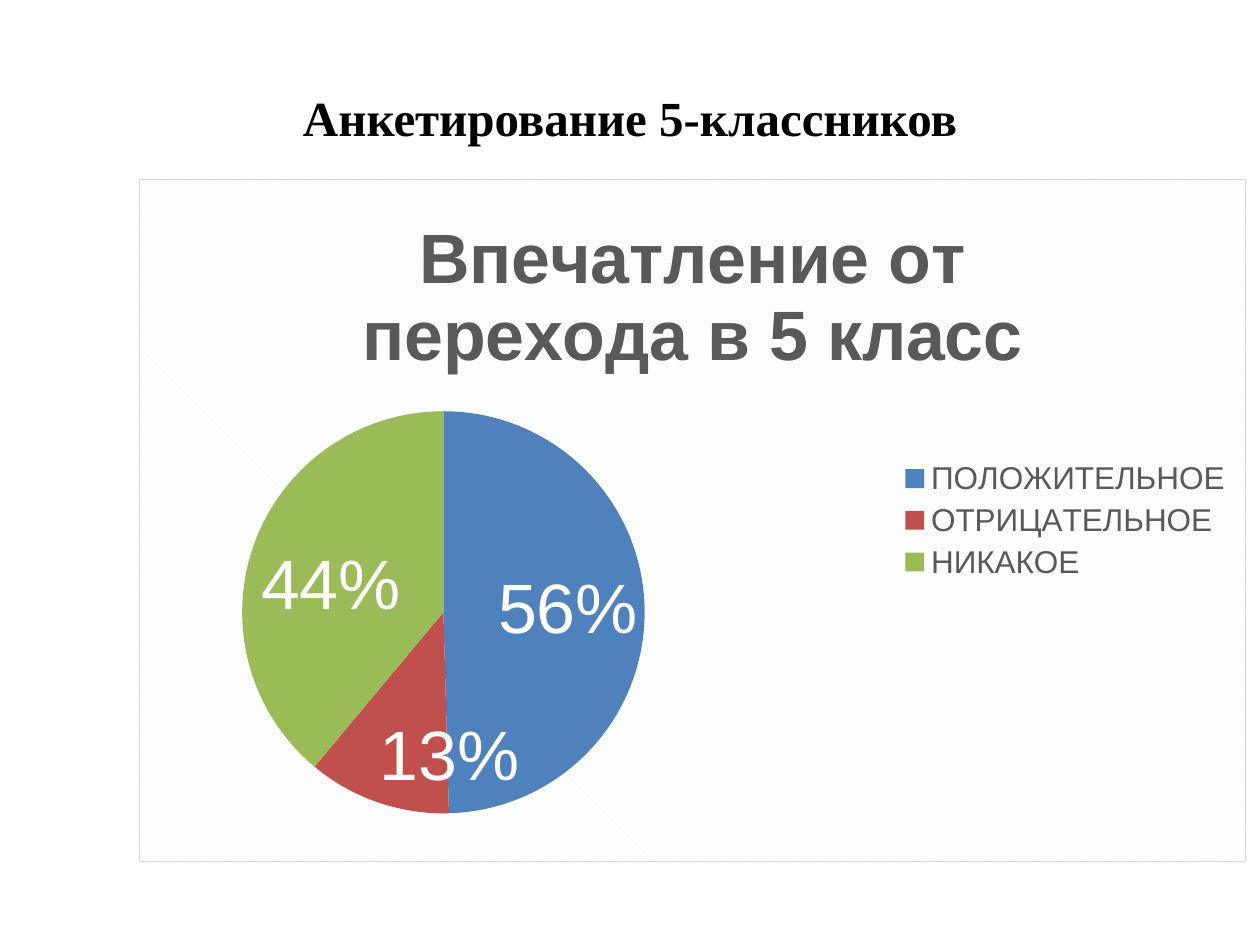
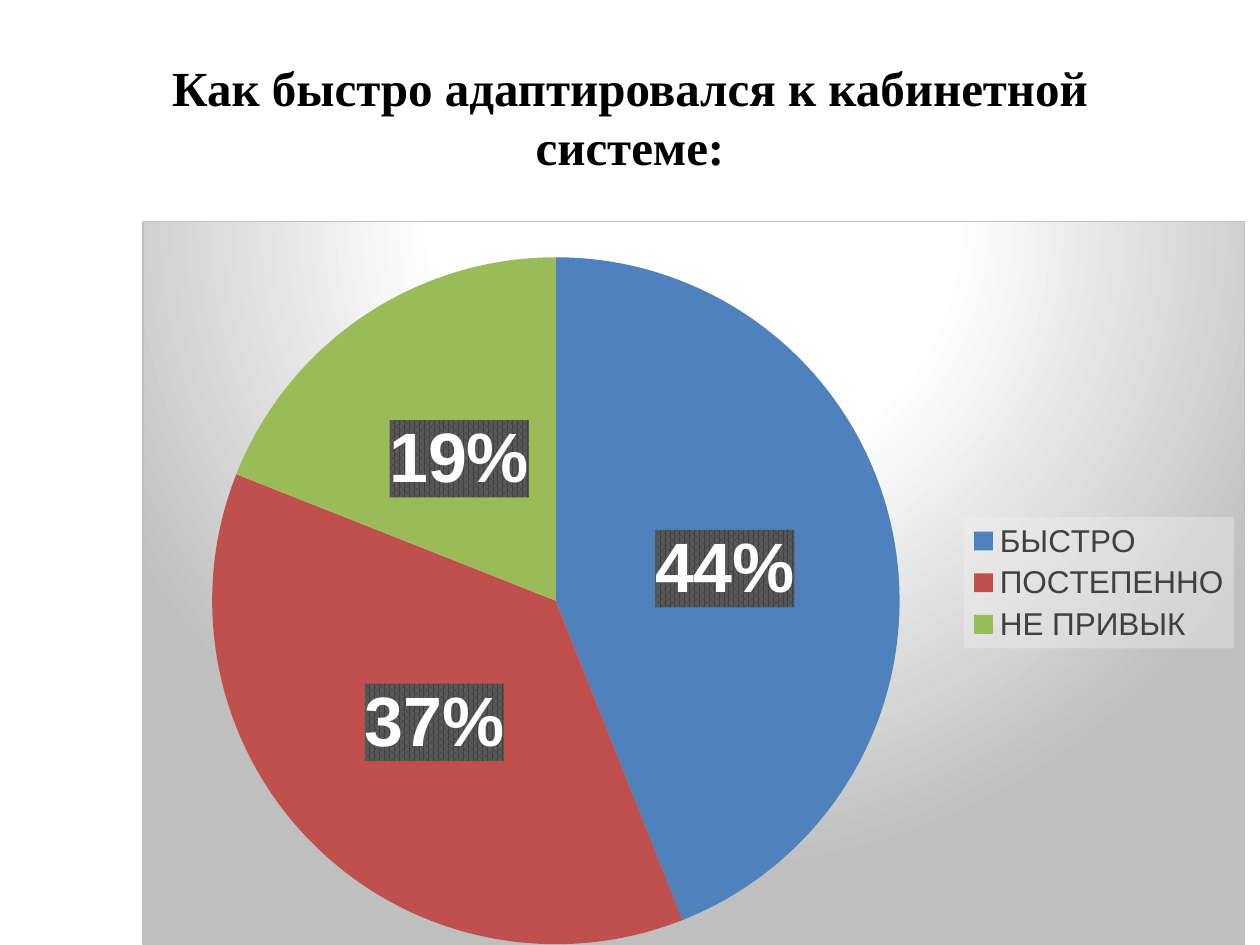
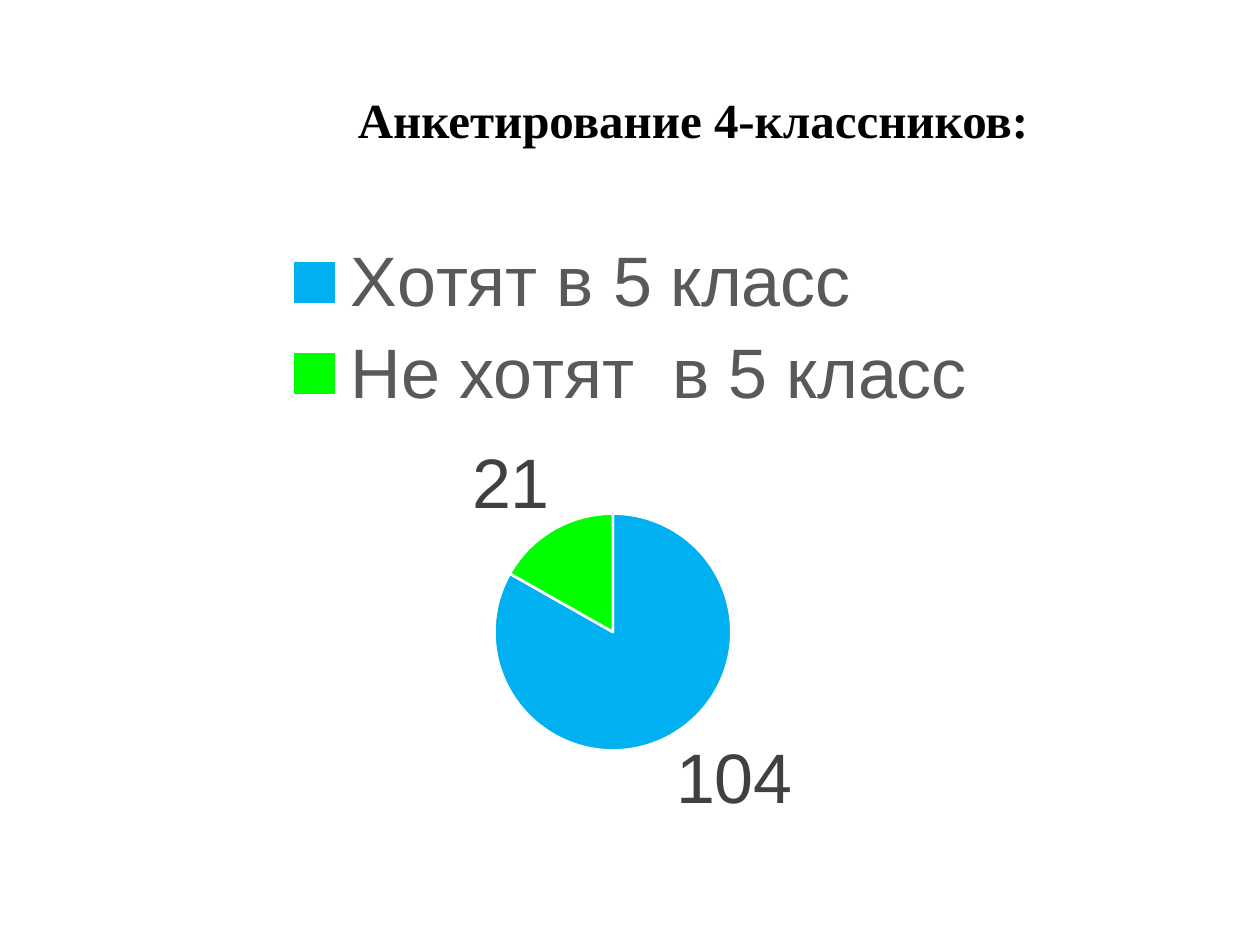
"""Builds three slides with pie charts of school survey results."""
from pptx import Presentation
from pptx.chart.data import CategoryChartData
from pptx.dml.color import RGBColor
from pptx.enum.chart import XL_CHART_TYPE, XL_LABEL_POSITION, XL_LEGEND_POSITION
from pptx.enum.text import MSO_ANCHOR, PP_ALIGN
from pptx.oxml import parse_xml
from pptx.oxml.ns import nsdecls, qn
from pptx.util import Inches, Pt

CHART_FONT = "Arial"
TITLE_FONT = "Times New Roman"
BLACK, WHITE, GRAY, DARK_GRAY = "000000", "FFFFFF", "595959", "404040"
SILVER, LIGHT_GRAY, PALE_GRAY = "BFBFBF", "D9D9D9", "F2F2F2"
THREE_COLORS = ["4F81BD", "C0504D", "9BBB59"]
TWO_COLORS = ["00B0F0", "00FF00"]
BIG, MEDIUM = 40, 18


def color(value):
    """Return the colour for a hex string."""
    return RGBColor.from_string(value)


def style_font(font, name, size, hex_color, bold=False):
    """Set the name, size, colour and weight of a font."""
    font.name = name
    font.size = Pt(size)
    font.bold = bold
    font.color.rgb = color(hex_color)


def add_page(deck, title, left=0.5, top=0.3):
    """Add a slide with a centred serif title."""
    page = deck.slides.add_slide(deck.slide_layouts[5])
    box = page.shapes.title
    box.left, box.top, box.width, box.height = map(Inches, (left, top, 9, 1.25))
    frame = box.text_frame
    frame.text = title
    frame.word_wrap = True
    frame.vertical_anchor = MSO_ANCHOR.MIDDLE
    paragraph = frame.paragraphs[0]
    paragraph.alignment = PP_ALIGN.CENTER
    style_font(paragraph.runs[0].font, TITLE_FONT, 28, BLACK, True)
    return page


def add_pie(page, area, plot, answers, colors):
    """Add a pie chart whose plot is placed by fractions of the chart area."""
    data = CategoryChartData()
    data.categories = list(answers)
    data.add_series("Series 1", list(answers.values()))
    chart = page.shapes.add_chart(XL_CHART_TYPE.PIE, *map(Inches, area), data).chart
    chart.has_title = False
    style_font(chart.font, CHART_FONT, 10, BLACK)
    chart.plots[0].vary_by_categories = True
    for index, hex_color in enumerate(colors):
        fill = chart.series[0].points[index].format.fill
        fill.solid()
        fill.fore_color.rgb = color(hex_color)
    place_plot(chart, plot)
    return chart


def place_plot(chart, plot):
    """Fix the inner plot area at fractions of the chart."""
    plot_area = chart.plots[0]._element.getparent()
    for layout in plot_area.findall(qn("c:layout")):
        plot_area.remove(layout)
    modes = "".join(f'<c:{name}Mode val="edge"/>' for name in "xy")
    sizes = "".join(f'<c:{name} val="{value}"/>' for name, value in zip("xywh", plot))
    plot_area.insert(0, parse_xml(
        f'<c:layout {nsdecls("c")}><c:manualLayout><c:layoutTarget val="inner"/>'
        f"{modes}{sizes}</c:manualLayout></c:layout>"))


def add_legend(chart, position, size, hex_color):
    """Show the legend beside the plot."""
    chart.has_legend = True
    chart.legend.position = position
    chart.legend.include_in_layout = False
    style_font(chart.legend.font, CHART_FONT, size, hex_color)


def add_labels(chart, position, hex_color, percent=False, bold=False):
    """Show large value or percentage labels on the slices."""
    labels = chart.series[0].data_labels
    style_font(labels.font, CHART_FONT, BIG, hex_color, bold)
    labels.show_value = not percent
    labels.show_percentage = percent
    labels.position = position
    if percent:
        labels.number_format = "0%"
        labels.number_format_is_linked = False
    return labels


def add_point_labels(chart, texts, position):
    """Write a label of its own on each slice."""
    for index, text in enumerate(texts):
        label = chart.series[0].points[index].data_label
        label.text_frame.text = text
        span = label.text_frame.paragraphs[0].runs[0]
        style_font(span.font, CHART_FONT, BIG, WHITE)
        label.position = position


def add_chart_title(chart, text):
    """Give the chart a bold heading."""
    chart.has_title = True
    frame = chart.chart_title.text_frame
    frame.text = text
    style_font(frame.paragraphs[0].runs[0].font, CHART_FONT, BIG, GRAY, True)


def outline_slices(chart, hex_color, width):
    """Draw a line around every slice."""
    for index in range(len(chart.plots[0].categories)):
        line = chart.series[0].points[index].format.line
        line.color.rgb = color(hex_color)
        line.width = Pt(width)


def solid_fill(hex_color, opacity=100):
    """Return the XML of a solid fill."""
    return (f'<a:solidFill><a:srgbClr val="{hex_color}">'
            f'<a:alpha val="{opacity * 1000}"/></a:srgbClr></a:solidFill>')


def pattern_fill(preset, front, back):
    """Return the XML of a pattern fill."""
    return (f'<a:pattFill prst="{preset}"><a:fgClr><a:srgbClr val="{front}"/></a:fgClr>'
            f'<a:bgClr><a:srgbClr val="{back}"/></a:bgClr></a:pattFill>')


def radial_fill(stops):
    """Return the XML of a round gradient centred above the chart."""
    marks = "".join(f'<a:gs pos="{position * 1000}"><a:srgbClr val="{hex_color}"/></a:gs>'
                    for position, hex_color in stops)
    return (f'<a:gradFill><a:gsLst>{marks}</a:gsLst><a:path path="circle">'
            '<a:fillToRect l="50000" t="-80000" r="50000" b="180000"/></a:path></a:gradFill>')


def paint(element, fill, border=None):
    """Fill a chart part that has text properties, with an optional border."""
    stroke = solid_fill(border) if border else "<a:noFill/>"
    element.find(qn("c:txPr")).addprevious(parse_xml(
        f'<c:spPr {nsdecls("c", "a")}>{fill}<a:ln w="{Pt(0.75)}">{stroke}</a:ln></c:spPr>'))


def build_impression(deck):
    """Build the slide on the impression of the fifth year."""
    page = add_page(deck, "Анкетирование 5-классников")
    answers = {"ПОЛОЖИТЕЛЬНОЕ": 0.56, "ОТРИЦАТЕЛЬНОЕ": 0.13, "НИКАКОЕ": 0.44}
    chart = add_pie(page, (1.1, 1.42, 8.79, 5.42), (0.09, 0.34, 0.37, 0.59),
                    answers, THREE_COLORS)
    add_chart_title(chart, "Впечатление от перехода в 5 класс")
    add_legend(chart, XL_LEGEND_POSITION.RIGHT, MEDIUM, GRAY)
    add_labels(chart, XL_LABEL_POSITION.INSIDE_END, WHITE)
    add_point_labels(chart, [f"{value:.0%}" for value in answers.values()],
                     XL_LABEL_POSITION.INSIDE_END)
    paint(chart._chartSpace, pattern_fill("dkDnDiag", PALE_GRAY, WHITE), LIGHT_GRAY)


def build_adaptation(deck):
    """Build the slide on the speed of adaptation."""
    page = add_page(deck, "Как быстро адаптировался к кабинетной системе:")
    answers = {"БЫСТРО": 44, "ПОСТЕПЕННО": 37, "НЕ ПРИВЫК": 19}
    chart = add_pie(page, (1.13, 1.75, 8.75, 5.75), (0.02, 0.05, 0.71, 0.95),
                    answers, THREE_COLORS)
    add_legend(chart, XL_LEGEND_POSITION.RIGHT, MEDIUM, DARK_GRAY)
    labels = add_labels(chart, XL_LABEL_POSITION.CENTER, WHITE, percent=True, bold=True)
    paint(labels._element, pattern_fill("pct75", DARK_GRAY, GRAY))
    paint(chart.legend._element, solid_fill(PALE_GRAY, 39))
    paint(chart._chartSpace, radial_fill([(0, WHITE), (39, WHITE), (100, SILVER)]), SILVER)


def build_wishes(deck):
    """Build the slide on the wishes of the fourth year."""
    page = add_page(deck, "Анкетирование 4-классников:", left=1, top=0.32)
    answers = {"Хотят в 5 класс": 104, "Не хотят  в 5 класс": 21}
    chart = add_pie(page, (0.5, 1.75, 9, 4.95), (0.38, 0.47, 0.21, 0.38),
                    answers, TWO_COLORS)
    add_legend(chart, XL_LEGEND_POSITION.TOP, BIG, GRAY)
    add_labels(chart, XL_LABEL_POSITION.OUTSIDE_END, DARK_GRAY)
    outline_slices(chart, WHITE, 1.5)


def main():
    """Build and save the deck."""
    deck = Presentation()
    deck.slide_width, deck.slide_height = Inches(10), Inches(7.5)
    build_impression(deck)
    build_adaptation(deck)
    build_wishes(deck)
    deck.save("out.pptx")


if __name__ == "__main__":
    main()
